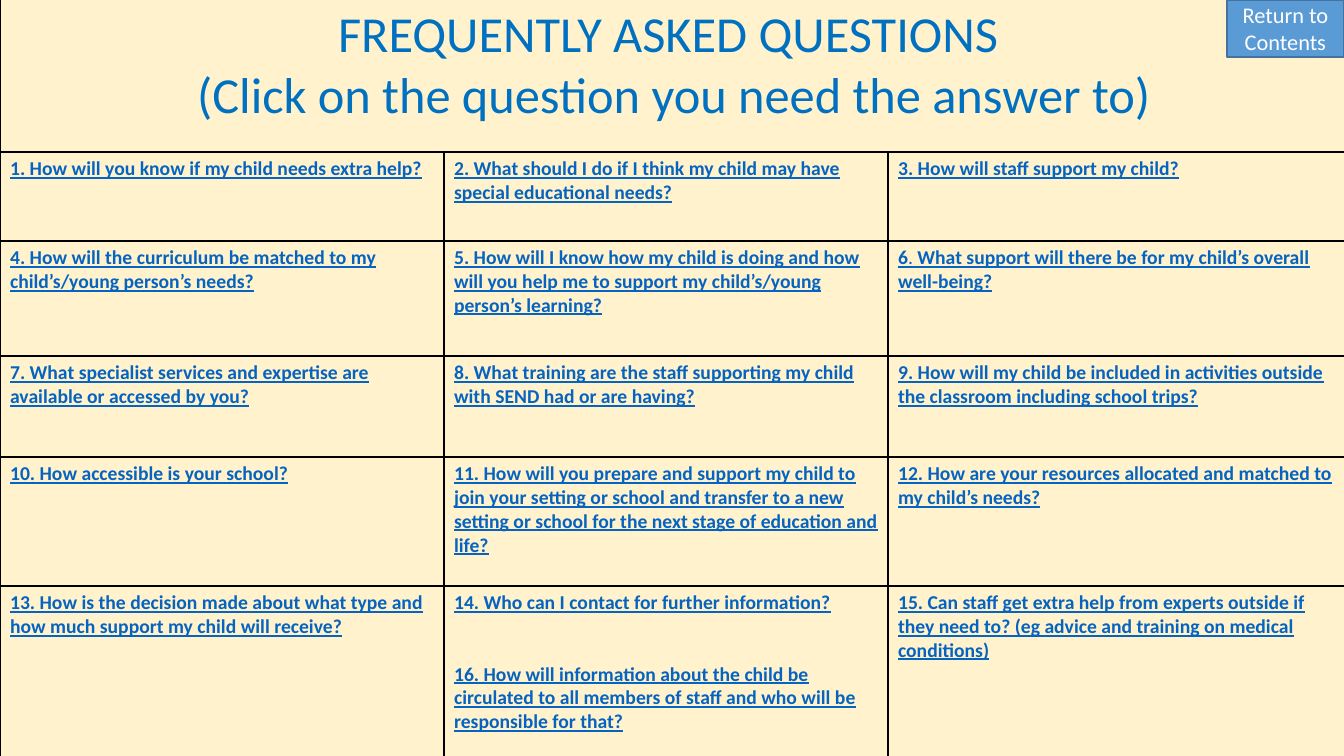
from lxml.etree import SubElement
from pptx import Presentation
from pptx.dml.color import RGBColor
from pptx.enum.shapes import MSO_SHAPE
from pptx.enum.text import MSO_ANCHOR, PP_ALIGN
from pptx.oxml.ns import qn
from pptx.util import Emu, Pt

CREAM = RGBColor(0xFF, 0xF2, 0xCC)
BLACK = RGBColor(0x00, 0x00, 0x00)
WHITE = RGBColor(0xFF, 0xFF, 0xFF)
TITLE_BLUE = RGBColor(0x00, 0x70, 0xC0)
LINK_BLUE = RGBColor(0x05, 0x63, 0xC1)
BUTTON_BLUE = RGBColor(0x5B, 0x9B, 0xD5)
BUTTON_EDGE = RGBColor(0x43, 0x73, 0x9E)

TITLE_FONT = {"name": "Calibri", "size": Pt(36), "bold": False}
LINK_FONT = {"name": "Calibri", "size": Pt(14), "underline": True}
BUTTON_FONT = {"name": "Calibri", "size": Pt(16)}
CENTRED = {"alignment": PP_ALIGN.CENTER}
LEFT = {"alignment": PP_ALIGN.LEFT}
SECOND_QUESTION = {"space_before": Pt(34)}

COLS = [444, 444, 460]
ROWS = [153, 89, 115, 101, 129, 175]
TITLE = ["FREQUENTLY ASKED QUESTIONS ", "(Click on the question you need the answer to)"]
QUESTIONS = [
    [["1. How will you know if my child needs extra help?"],
     ["2. What should I do if I think my child may have special educational needs?"],
     ["3. How will staff support my child?"]],
    [["4. How will the curriculum be matched to my child’s/young person’s needs?"],
     ["5. How will I know how my child is doing and how will you help me to support "
      "my child’s/young person’s learning?"],
     ["6|. |What support will there be for my child’s overall well-being?"]],
    [["7. What specialist services and expertise are available or accessed by you?"],
     ["8. What training are the staff supporting my child with SEND had or are having?"],
     ["9. How will my child be included in activities outside the classroom "
      "including school trips?"]],
    [["10. How accessible is your school?"],
     ["11. How will you prepare and support my child to join your setting or school and "
      "transfer to a new setting or school for the next stage of education and life?"],
     ["12. How are your resources allocated and matched to my child’s needs?"]],
    [["13. How is the decision made about what type and how much support my child "
      "will receive?"],
     ["14. Who can I contact for further information?",
      "16. How will information about the child be circulated to all members of staff "
      "and who will be responsible for that?"],
     ["15. Can staff get extra help from experts outside if they need to? "
      "(eg advice and training on medical conditions)"]],
]


def px(n):
    """Turn pixels into EMU, with 1344 pixels across the slide."""
    return Emu(n * 12192000 // 1344)


def apply(target, formats):
    """Set each format value as an attribute of the target."""
    for name, value in formats.items():
        setattr(target, name, value)


def add_run(p, text, color, formats):
    """Add one formatted run to a paragraph."""
    r = p.add_run()
    r.text = text
    r.font.color.rgb = color
    apply(r.font, formats)


def next_paragraph(tf, i):
    """Return the first paragraph of a frame, or a new one after it."""
    return tf.add_paragraph() if i else tf.paragraphs[0]


def write_centred(tf, lines, color, formats):
    """Write centred lines, one paragraph each."""
    for i, line in enumerate(lines):
        p = next_paragraph(tf, i)
        apply(p, CENTRED)
        add_run(p, line, color, formats)


def write_questions(tf, questions):
    """Write underlined questions, with bars around any part that is not bold."""
    for i, question in enumerate(questions):
        p = next_paragraph(tf, i)
        apply(p, LEFT | (SECOND_QUESTION if i else {}))
        for k, part in enumerate(question.split("|")):
            add_run(p, part, LINK_BLUE, LINK_FONT | {"bold": k % 2 == 0})


def style_cell(cell):
    """Give a cell black borders and no fill."""
    tcPr = cell._tc.get_or_add_tcPr()
    for side in ("a:lnL", "a:lnR", "a:lnT", "a:lnB"):
        ln = SubElement(tcPr, qn(side), w=str(Pt(1)))
        fill = SubElement(ln, qn("a:solidFill"))
        SubElement(fill, qn("a:srgbClr"), val=str(BLACK))
    cell.fill.background()


def add_question_table(s):
    """Add the table with its title row and the grid of questions."""
    frame = s.shapes.add_table(len(ROWS), len(COLS), px(0), px(-1),
                               px(sum(COLS)), px(sum(ROWS)))
    table = frame.table
    apply(table, {"first_row": False, "horz_banding": False})
    for col, width in zip(table.columns, COLS):
        col.width = px(width)
    for row, height in zip(table.rows, ROWS):
        row.height = px(height)
    for cell in table.iter_cells():
        style_cell(cell)
    table.cell(0, 0).merge(table.cell(0, len(COLS) - 1))
    write_centred(table.cell(0, 0).text_frame, TITLE, TITLE_BLUE, TITLE_FONT)
    for i, row in enumerate(QUESTIONS, 1):
        for j, questions in enumerate(row):
            write_questions(table.cell(i, j).text_frame, questions)


def add_button(s, text, x, y, w, h):
    """Add a blue button with a centred label."""
    sp = s.shapes.add_shape(MSO_SHAPE.RECTANGLE, px(x), px(y), px(w), px(h))
    sp.shadow.inherit = False
    sp.fill.solid()
    sp.fill.fore_color.rgb = BUTTON_BLUE
    sp.line.color.rgb = BUTTON_EDGE
    sp.line.width = Pt(1)
    apply(sp.text_frame, {"word_wrap": True, "vertical_anchor": MSO_ANCHOR.MIDDLE})
    write_centred(sp.text_frame, [text], WHITE, BUTTON_FONT)


def main():
    """Build the slide and save it."""
    prs = Presentation()
    apply(prs, {"slide_width": px(1344), "slide_height": px(756)})
    s = prs.slides.add_slide(prs.slide_layouts[6])
    s.background.fill.solid()
    s.background.fill.fore_color.rgb = CREAM
    add_question_table(s)
    add_button(s, "Return to Contents", 1227, 0, 117, 57)
    prs.save("out.pptx")


if __name__ == "__main__":
    main()
